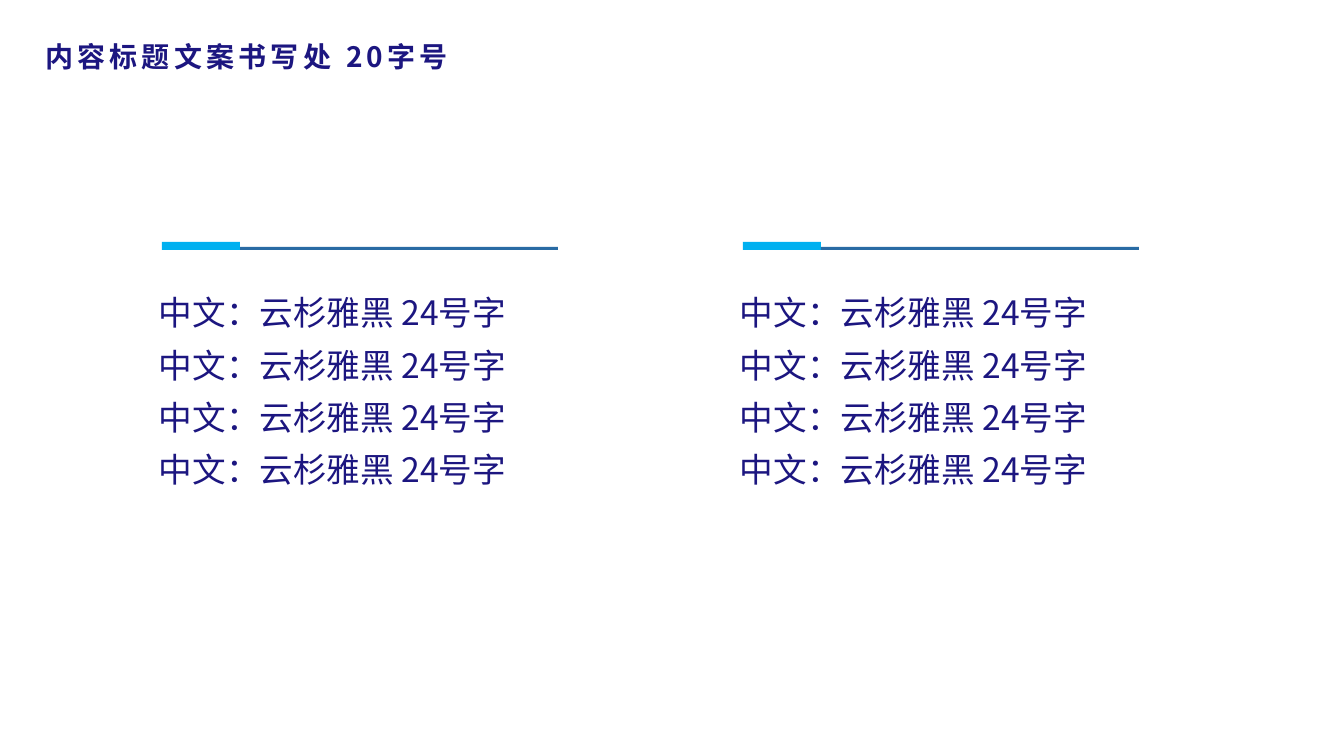
import pptx
import pptx.util
import pptx.dml.color
import pptx.enum.shapes
import pptx.enum.text
import pptx.oxml.ns
import lxml.etree

# Content
TITLE = "内容标题文案书写处 20字号"
COLUMNS = [["中文：云杉雅黑 24号字"] * 4] * 2

# Look and layout, in px
FONT = "Noto Sans CJK SC"
NAVY, CYAN, BLUE = "1C1680", "00B0F0", "296BA4"
PX = 12192000 / 1344
TITLE_BOX = (35, 34, 805, 44)
TEXT_BOX = (149, 275, 510, 274)
ACCENT_BAR = (162, 242, 78, 8)
THIN_RULE = (240, 247, 318, 3)
COLUMN_STEP = 581


def emu(*lengths):
    return [round(n * PX) for n in lengths]


def rgb(color):
    return pptx.dml.color.RGBColor.from_string(color)


def write(sp, lines, size, color=NAVY, bold=False, line_spacing=1.0, tracking=0):
    tf = sp.text_frame
    tf.word_wrap = True
    tf.vertical_anchor = pptx.enum.text.MSO_ANCHOR.TOP
    tf.auto_size = pptx.enum.text.MSO_AUTO_SIZE.NONE
    for i, line in enumerate(lines):
        p = tf.add_paragraph() if i else tf.paragraphs[0]
        p.alignment = pptx.enum.text.PP_ALIGN.LEFT
        p.line_spacing = line_spacing
        p.space_before = pptx.util.Pt(0)
        r = p.add_run()
        r.text = line
        r.font.size = pptx.util.Pt(size)
        r.font.bold = bold
        r.font.name = FONT
        r.font.color.rgb = rgb(color)
        props = r.font._element
        props.set("spc", str(tracking * 100))
        ea = lxml.etree.SubElement(props, pptx.oxml.ns.qn("a:ea"))
        ea.set("typeface", FONT)


def add_bar(slide, box, color):
    sp = slide.shapes.add_shape(pptx.enum.shapes.MSO_SHAPE.RECTANGLE, *emu(*box))
    sp.shadow.inherit = False
    sp.fill.solid()
    sp.fill.fore_color.rgb = rgb(color)
    sp.line.fill.background()


def main():
    prs = pptx.Presentation()
    prs.slide_width, prs.slide_height = emu(1344, 756)
    slide = prs.slides.add_slide(prs.slide_layouts[5])

    # Title
    title = slide.shapes.title
    title.left, title.top, title.width, title.height = emu(*TITLE_BOX)
    write(title, [TITLE], 20, bold=True, tracking=3)

    # Columns: text under a two-part rule
    for i, lines in enumerate(COLUMNS):
        def shifted(box):
            return (box[0] + i * COLUMN_STEP, *box[1:])

        text = slide.shapes.add_textbox(*emu(*shifted(TEXT_BOX)))
        write(text, lines, 24, line_spacing=1.3)
        add_bar(slide, shifted(ACCENT_BAR), CYAN)
        add_bar(slide, shifted(THIN_RULE), BLUE)

    prs.save("out.pptx")


if __name__ == "__main__":
    main()
